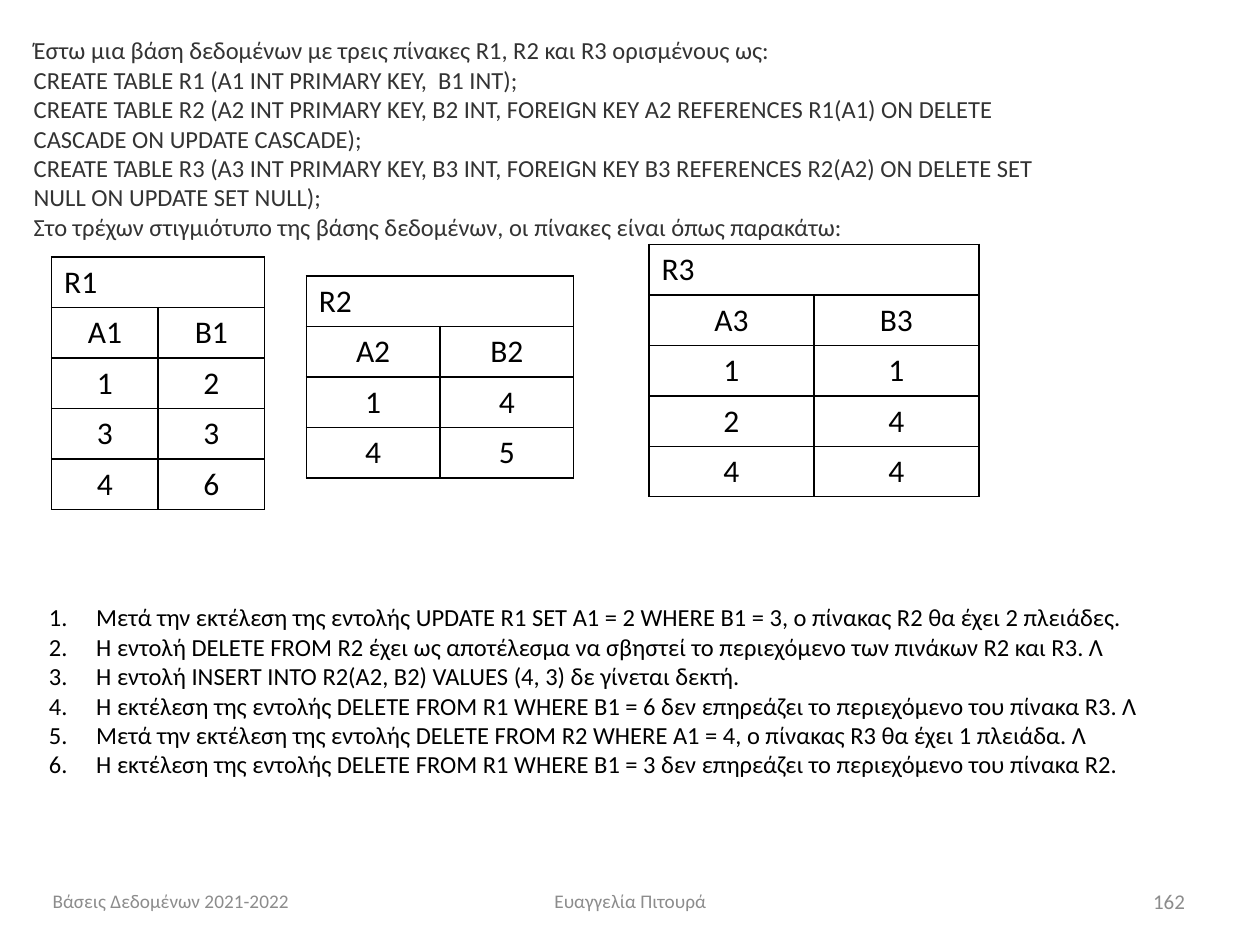
from dataclasses import dataclass

from lxml import etree
from pptx import Presentation
from pptx import util as u
from pptx.dml.color import RGBColor
from pptx.enum import text
from pptx.oxml import ns


@dataclass(frozen=True)
class Theme:
    font: str = "Calibri"
    ink: str = "000000"
    body: str = "333333"
    muted: str = "8C8C8C"
    paper: str = "FFFFFF"
    table_size: float = 18
    body_size: float = 14
    number_size: float = 12
    footer_size: float = 11
    row_height: float = 28.8
    border: float = 1
    indent: float = 27


LEFT, CENTER, RIGHT = text.PP_ALIGN.LEFT, text.PP_ALIGN.CENTER, text.PP_ALIGN.RIGHT
TOP, MIDDLE = text.MSO_ANCHOR.TOP, text.MSO_ANCHOR.MIDDLE

SCHEMA = [
    "Έστω μια βάση δεδομένων με τρεις πίνακες R1, R2 και R3 ορισμένους ως:",
    "CREATE TABLE R1 (A1 INT PRIMARY KEY,  B1 INT);",
    "CREATE TABLE R2 (A2 INT PRIMARY KEY, B2 INT, FOREIGN KEY A2 REFERENCES R1(A1) "
    "ON DELETE CASCADE ΟΝ UPDATE CASCADE);",
    "CREATE TABLE R3 (A3 INT PRIMARY KEY, B3 INT, FOREIGN KEY B3 REFERENCES R2(A2) "
    "ON DELETE SET NULL ΟΝ UPDATE SET NULL);",
    "Στο τρέχων στιγμιότυπο της βάσης δεδομένων, οι πίνακες είναι όπως παρακάτω:",
]
STATEMENTS = [
    "Μετά την εκτέλεση της εντολής UPDATE R1 SET A1 = 2 WHERE B1 = 3, ο πίνακας R2 θα έχει 2 πλειάδες.",
    "Η εντολή DELETE FROM R2 έχει ως αποτέλεσμα να σβηστεί το περιεχόμενο των πινάκων R2 και R3. Λ",
    "Η εντολή INSERT INTO R2(A2, B2) VALUES (4, 3) δε γίνεται δεκτή.",
    "Η εκτέλεση της εντολής DELETE FROM R1 WHERE B1 = 6 δεν επηρεάζει το περιεχόμενο του πίνακα R3. Λ",
    "Μετά την εκτέλεση της εντολής DELETE FROM R2 WHERE A1 = 4, ο πίνακας R3 θα έχει 1 πλειάδα. Λ",
    "Η εκτέλεση της εντολής DELETE FROM R1 WHERE B1 = 3 δεν επηρεάζει το περιεχόμενο του πίνακα R2.",
]
RELATIONS = [
    ("R1", (29.5, 146.9, 121.7), [("A1", "B1"), (1, 2), (3, 3), (4, 6)]),
    ("R2", (175, 157.7, 152.8), [("A2", "B2"), (1, 4), (4, 5)]),
    ("R3", (370.8, 139.7, 188.6), [("A3", "B3"), (1, 1), (2, 4), (4, 4)]),
]
FOOTERS = [
    ("162", (516.2, 168), RIGHT, Theme.number_size),
    ("Ευαγγελία Πιτουρά", (246.2, 228), CENTER, Theme.footer_size),
    ("Βάσεις Δεδομένων 2021-2022", (23, 168), LEFT, Theme.footer_size),
]


class SlideBuilder:
    """Adds styled elements to the current slide."""

    def __init__(self, slide, theme):
        self.slide = slide
        self.theme = theme

    def style(self, paragraph, size, color, align=LEFT):
        paragraph.alignment = align
        for run in paragraph.runs:
            run.font.name = self.theme.font
            run.font.size = u.Pt(size)
            run.font.color.rgb = RGBColor.from_string(color)

    def text_box(self, lines, box, size, color, align=LEFT, anchor=TOP):
        shape = self.slide.shapes.add_textbox(*map(u.Pt, box))
        frame = shape.text_frame
        frame.word_wrap = True
        frame.vertical_anchor = anchor
        frame.text = "\n".join(lines)
        for paragraph in frame.paragraphs:
            self.style(paragraph, size, color, align)
        return frame

    def numbered_list(self, lines, box, size, color):
        indent = u.Pt(self.theme.indent)
        for paragraph in self.text_box(lines, box, size, color).paragraphs:
            properties = paragraph._p.get_or_add_pPr()
            properties.set("marL", str(indent))
            properties.set("indent", str(-indent))
            etree.SubElement(properties, ns.qn("a:buFont"), typeface="+mj-lt")
            etree.SubElement(properties, ns.qn("a:buAutoNum"), type="arabicPeriod")

    def cell(self, cell, value, align):
        cell.text = str(value)
        cell.vertical_anchor = MIDDLE
        self.style(cell.text_frame.paragraphs[0], self.theme.table_size, self.theme.ink, align)

    def borders(self, cell):
        properties = cell._tc.get_or_add_tcPr()
        for side in ("lnL", "lnR", "lnT", "lnB"):
            line = etree.SubElement(properties, ns.qn(f"a:{side}"), w=str(u.Pt(self.theme.border)))
            fill = etree.SubElement(line, ns.qn("a:solidFill"))
            etree.SubElement(fill, ns.qn("a:srgbClr"), val=self.theme.ink)
        cell.fill.solid()
        cell.fill.fore_color.rgb = RGBColor.from_string(self.theme.paper)

    def relation(self, name, place, rows):
        left, top, width = place
        count = len(rows) + 1
        height = count * self.theme.row_height
        shape = self.slide.shapes.add_table(count, 2, *map(u.Pt, (left, top, width, height)))
        table = shape.table
        for cell in table.iter_cells():
            self.borders(cell)
        table.cell(0, 0).merge(table.cell(0, 1))
        self.cell(table.cell(0, 0), name, LEFT)
        for row, values in enumerate(rows, 1):
            for column, value in enumerate(values):
                self.cell(table.cell(row, column), value, CENTER)


def main():
    theme = Theme()
    presentation = Presentation()
    presentation.slide_width, presentation.slide_height = u.Pt(720), u.Pt(540)
    builder = SlideBuilder(presentation.slides.add_slide(presentation.slide_layouts[6]), theme)
    builder.text_box(SCHEMA, (12.2, 16.6, 604, 126), theme.body_size, theme.body)
    for name, place, rows in RELATIONS:
        builder.relation(name, place, rows)
    builder.numbered_list(STATEMENTS, (20.9, 340.6, 654.5, 108.7), theme.body_size, theme.ink)
    for label, (left, width), align, size in FOOTERS:
        builder.text_box([label], (left, 500.4, width, 28.8), size, theme.muted, align, MIDDLE)
    presentation.save("out.pptx")


if __name__ == "__main__":
    main()
